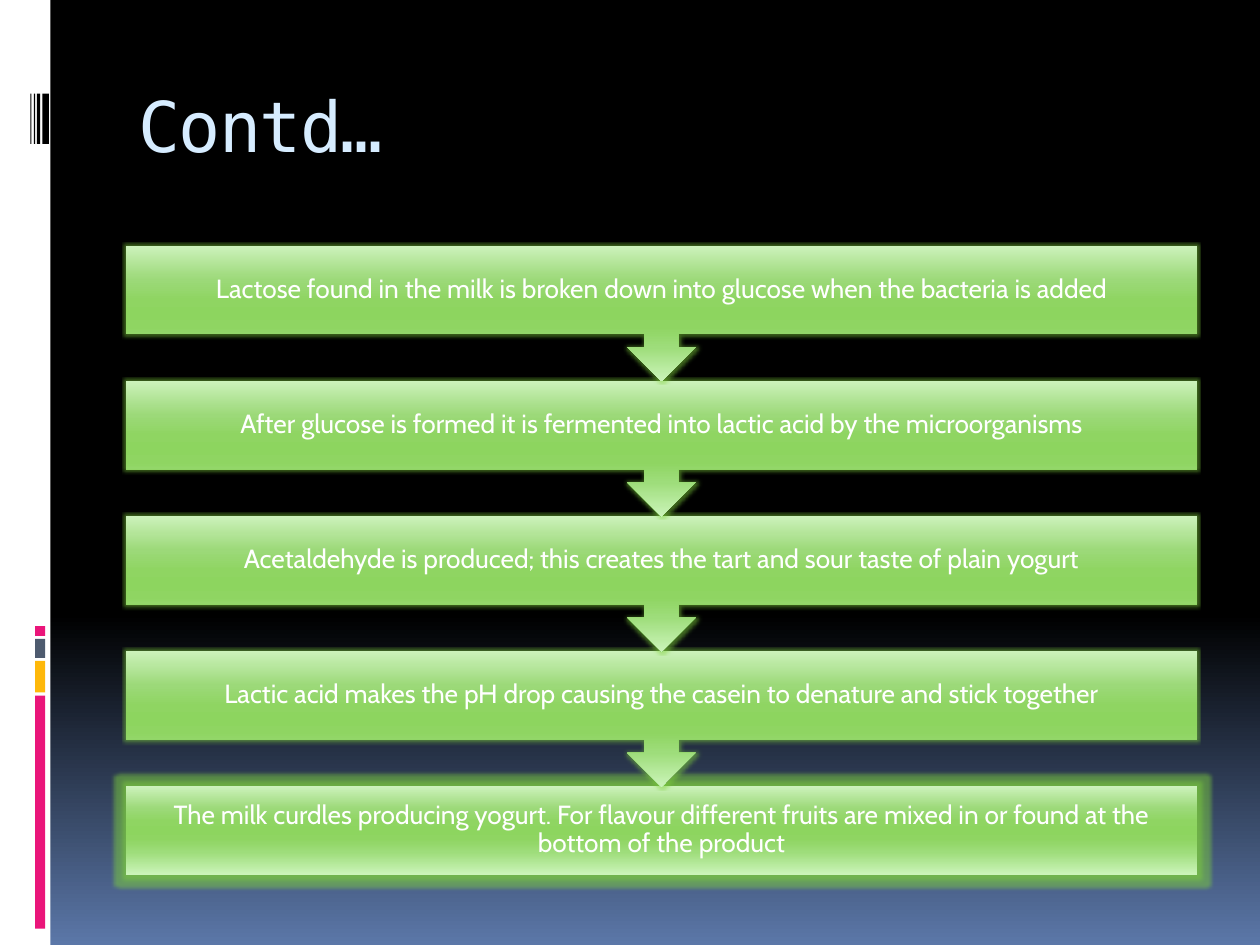
from lxml.etree import SubElement
from pptx import Presentation
from pptx.dml.color import RGBColor
from pptx.enum.shapes import MSO_SHAPE
from pptx.enum.text import MSO_ANCHOR, PP_ALIGN
from pptx.oxml.ns import qn
from pptx.util import Pt

WHITE = RGBColor(0xFF, 0xFF, 0xFF)
BLACK = RGBColor(0x00, 0x00, 0x00)
PINK = RGBColor(0xEA, 0x15, 0x7A)
AMBER = RGBColor(0xFE, 0xB8, 0x0A)
SLATE = RGBColor(0x4E, 0x5B, 0x6F)
ICE = RGBColor(0xD6, 0xEC, 0xFF)
DUSK = RGBColor(0x5B, 0x77, 0xA8)
GLOW = RGBColor(0x7F, 0xD1, 0x3B)

BACKGROUND_STOPS = [(0, BLACK), (65, BLACK), (100, DUSK)]
GREEN_STOPS = [
    (0, RGBColor(0xCC, 0xF2, 0xBB)),
    (25, RGBColor(0x9C, 0xD9, 0x79)),
    (40, RGBColor(0x8F, 0xD5, 0x62)),
    (50, RGBColor(0x8D, 0xD5, 0x5F)),
    (60, RGBColor(0x8F, 0xD5, 0x62)),
    (75, RGBColor(0x9E, 0xDD, 0x7B)),
    (100, RGBColor(0xCB, 0xF4, 0xB9)),
]

STEPS = [
    "Lactose found in the milk is broken down into glucose when the bacteria is added",
    "After glucose is formed it is fermented into lactic acid by the microorganisms",
    "Acetaldehyde is produced; this creates the tart and sour taste of plain yogurt",
    "Lactic acid makes the pH drop causing the casein to denature and stick together",
    "The milk curdles producing yogurt. For flavour different fruits are mixed in "
    "or found at the bottom of the product",
]


def fill_gradient(fill, parent, stops):
    """Fill from top to bottom; parent is the element that holds the fill."""
    fill.gradient()
    fill.gradient_angle = 270
    stop_list = parent.find(".//" + qn("a:gsLst"))
    for old_stop in list(stop_list):
        stop_list.remove(old_stop)
    for position, color in stops:
        stop = SubElement(stop_list, qn("a:gs"), pos=str(position * 1000))
        SubElement(stop, qn("a:srgbClr"), val=str(color))


def add_glow(shape, radius, opacity):
    shape.shadow.inherit = False
    effects = shape._element.spPr.find(qn("a:effectLst"))
    glow = SubElement(effects, qn("a:glow"), rad=str(Pt(radius)))
    color = SubElement(glow, qn("a:srgbClr"), val=str(GLOW))
    SubElement(color, qn("a:alpha"), val=str(opacity * 1000))


def write_text(frame, text, *, font, size, color, align, anchor, margins, spacing=1, tracking=0):
    """Write one paragraph; margins are left, top, right and bottom."""
    frame.word_wrap = True
    frame.vertical_anchor = anchor
    (frame.margin_left, frame.margin_top,
     frame.margin_right, frame.margin_bottom) = map(Pt, margins)
    paragraph = frame.paragraphs[0]
    paragraph.alignment = align
    paragraph.line_spacing = spacing
    run = paragraph.add_run()
    run.text = text
    run.font.name = font
    run.font.size = Pt(size)
    run.font.color.rgb = color
    if tracking:
        run.font._element.set("spc", str(tracking * 100))


def add_bar(slide, left, top, width, height, color):
    bar = slide.shapes.add_shape(MSO_SHAPE.RECTANGLE, Pt(left), Pt(top), Pt(width), Pt(height))
    bar.shadow.inherit = False
    bar.fill.solid()
    bar.fill.fore_color.rgb = color
    bar.line.fill.background()


def add_side_strip(slide, left, top, width, height):
    add_bar(slide, left, top, width, height, WHITE)
    right = left + width
    for offset, size, color in [(357.8, 5.6, PINK), (365.1, 10.8, SLATE),
                                (377.7, 18, AMBER), (397.5, 133.2, PINK)]:
        add_bar(slide, right - 8.8, top + offset, 5.8, size, color)
    for inset, thickness in [(4.6, 3.8), (7.8, 2), (9.4, 0.7), (11.5, 0.7)]:
        add_bar(slide, right - inset, top + 53.5, thickness, 28.8, BLACK)


def add_title(slide, left, top, width, height):
    title = slide.shapes.title
    title.left, title.top, title.width, title.height = map(Pt, (left, top, width, height))
    write_text(title.text_frame, "Contd…", font="DejaVu Sans Mono", size=40, color=ICE,
               align=PP_ALIGN.LEFT, anchor=MSO_ANCHOR.TOP, margins=(7.2, 6.6, 7.2, 3.6),
               tracking=-1)


def add_process(slide, left, top, width, height):
    """Stack the steps; each but the last points down to the next."""
    box_height = 50.4
    pitch = (height - box_height) / (len(STEPS) - 1)
    last = len(STEPS) - 1
    for index in reversed(range(len(STEPS))):
        is_last = index == last
        kind = MSO_SHAPE.RECTANGLE if is_last else MSO_SHAPE.DOWN_ARROW_CALLOUT
        shape_height = box_height if is_last else pitch + 0.3
        step = slide.shapes.add_shape(kind, Pt(left), Pt(top + index * pitch),
                                      Pt(width), Pt(shape_height))
        if not is_last:
            step.adjustments[3] = box_height / shape_height
        fill_gradient(step.fill, step._element.spPr, GREEN_STOPS)
        step.line.fill.background()
        add_glow(step, radius=5 if is_last else 2, opacity=50)
        write_text(step.text_frame, STEPS[index], font="Cabin", size=15, color=WHITE,
                   align=PP_ALIGN.CENTER, anchor=MSO_ANCHOR.MIDDLE,
                   margins=(8.4, 8.4, 8.4, 8.4), spacing=0.9)


def main():
    presentation = Presentation()
    presentation.slide_width, presentation.slide_height = Pt(720), Pt(540)
    slide = presentation.slides.add_slide(presentation.slide_layouts[5])
    fill_gradient(slide.background.fill, slide._element.cSld, BACKGROUND_STOPS)
    add_side_strip(slide, 0, 0, 28.8, 540)
    add_title(slide, 72, 40.3, 612, 72)
    add_process(slide, 72, 140.4, 612, 359.3)
    presentation.save("out.pptx")


if __name__ == "__main__":
    main()
